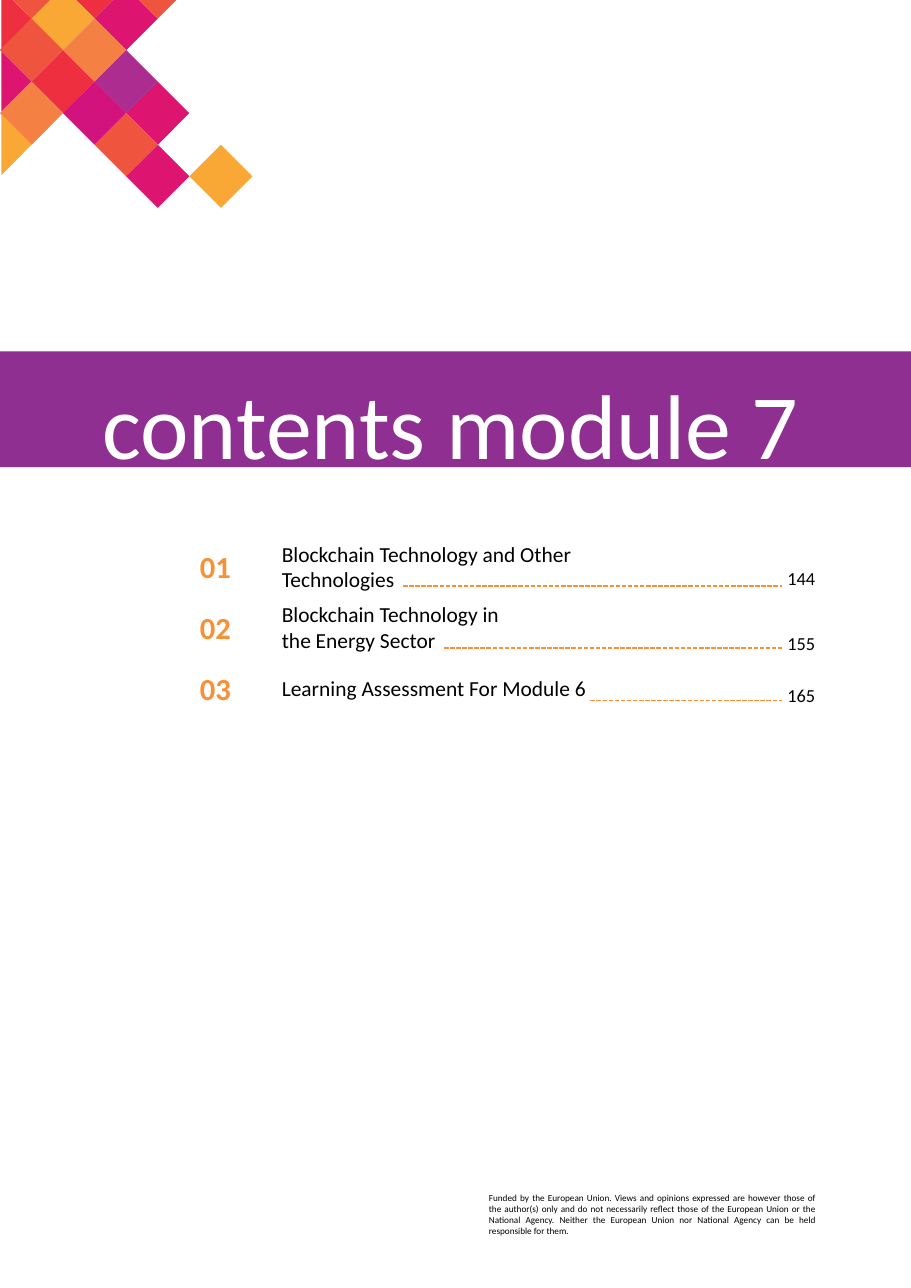
from dataclasses import dataclass

from lxml import etree
from pptx import Presentation
from pptx.dml.color import RGBColor
from pptx.enum.dml import MSO_LINE
from pptx.enum.shapes import MSO_CONNECTOR, MSO_SHAPE
from pptx.enum.text import MSO_ANCHOR, MSO_AUTO_SIZE, PP_ALIGN
from pptx.oxml.ns import qn
from pptx.slide import Slide
from pptx.text.text import TextFrame
from pptx.util import Pt

LEFT, CENTER, RIGHT = PP_ALIGN.LEFT, PP_ALIGN.CENTER, PP_ALIGN.RIGHT
JUSTIFY = PP_ALIGN.JUSTIFY
TOP, MIDDLE = MSO_ANCHOR.TOP, MSO_ANCHOR.MIDDLE
NO_AUTOFIT = MSO_AUTO_SIZE.NONE
RECTANGLE, STRAIGHT = MSO_SHAPE.RECTANGLE, MSO_CONNECTOR.STRAIGHT
LEADER_DASH = MSO_LINE.SQUARE_DOT

PAGE_WIDTH, PAGE_HEIGHT = 595.44, 841.68
TITLE_ONLY = 5
FONT = "Calibri"
BLACK, WHITE, ORANGE, PURPLE = "000000", "FFFFFF", "F79037", "8E2F91"
AMBER, RED, CORAL = "F9A835", "ED2F40", "EF543F"
PEACH, PINK, MAGENTA, VIOLET = "F48043", "DD1470", "D3137D", "AC2C90"

HALF_TILE = 20.63
FIRST_ROW_Y = 12.1
MOSAIC_LEFT, MOSAIC_TOP = 0.9, -2.9

FUNDING = (
    "Funded by the European Union. Views and opinions expressed are however "
    "those of the author(s) only and do not necessarily reflect those of the "
    "European Union or the National Agency. Neither the European Union nor "
    "National Agency can be held responsible for them."
)

Point = tuple[float, float]
Box = tuple[float, float, float, float]


@dataclass(frozen=True)
class Tile:
    """A diamond centred on a lattice point, counted in half tiles."""

    column: int
    row: int
    color: str


@dataclass(frozen=True)
class Entry:
    number: str
    heading: tuple[str, ...]
    top: float
    page: str
    page_top: float
    leader_start: float
    leader_y: float


TILES = [
    Tile(3, -1, RED), Tile(4, 0, PINK), Tile(5, -1, CORAL), Tile(2, 0, AMBER),
    Tile(1, 1, CORAL), Tile(2, 2, RED), Tile(3, 1, PEACH), Tile(0, 2, PINK),
    Tile(0, 4, AMBER), Tile(1, 3, PEACH), Tile(7, 5, AMBER), Tile(5, 5, PINK),
    Tile(5, 3, PINK), Tile(4, 2, VIOLET), Tile(3, 3, MAGENTA),
    Tile(4, 4, CORAL), Tile(1, -1, CORAL), Tile(0, 0, RED),
]

ENTRIES = [
    Entry("01", ("Blockchain Technology and Other", "Technologies"),
          356.4, "144", 364.3, 263.5, 383),
    Entry("02", ("Blockchain Technology in", "the Energy Sector"),
          396, "155", 406.8, 290.2, 423.4),
    Entry("03", ("Learning Assessment For Module 6",),
          436, "165", 440.6, 385.9, 457.9),
]


def rgb(color: str) -> RGBColor:
    return RGBColor.from_string(color)


def clip(points: list[Point], axis: int, limit: float) -> list[Point]:
    """Keep the part of a polygon at or beyond the limit on one axis."""
    kept = []
    for start, end in zip(points, points[1:] + points[:1]):
        if start[axis] >= limit:
            kept.append(start)
        if (start[axis] - limit) * (end[axis] - limit) < 0:
            share = (limit - start[axis]) / (end[axis] - start[axis])
            kept.append((start[0] + share * (end[0] - start[0]),
                         start[1] + share * (end[1] - start[1])))
    return kept


def paint(shape, color: str) -> None:
    shape.shadow.inherit = False
    shape.fill.solid()
    shape.fill.fore_color.rgb = rgb(color)
    shape.line.fill.background()


def draw_tile(slide: Slide, tile: Tile) -> None:
    x = tile.column * HALF_TILE
    y = FIRST_ROW_Y + tile.row * HALF_TILE
    corners = [(x, y - HALF_TILE), (x + HALF_TILE, y),
               (x, y + HALF_TILE), (x - HALF_TILE, y)]
    if tile.column == 0:
        corners = clip(corners, 0, MOSAIC_LEFT)
    outline = [(Pt(px), Pt(py)) for px, py in clip(corners, 1, MOSAIC_TOP)]
    builder = slide.shapes.build_freeform(*outline[0])
    builder.add_line_segments(outline[1:], close=True)
    paint(builder.convert_to_shape(), tile.color)


def write(frame: TextFrame, lines: tuple[str, ...], size: float, color: str,
          align=LEFT, anchor=TOP, bold: bool = False) -> None:
    frame_format = {"word_wrap": True, "auto_size": NO_AUTOFIT,
                    "vertical_anchor": anchor}
    for name, value in frame_format.items():
        setattr(frame, name, value)
    font_format = {"name": FONT, "size": Pt(size), "bold": bold}
    for index, line in enumerate(lines):
        paragraph = frame.add_paragraph() if index else frame.paragraphs[0]
        paragraph.alignment = align
        run = paragraph.add_run()
        run.text = line
        for name, value in font_format.items():
            setattr(run.font, name, value)
        run.font.color.rgb = rgb(color)


def add_text(slide: Slide, box: Box, lines: tuple[str, ...], size: float,
             color: str, align=LEFT, anchor=TOP, bold: bool = False) -> None:
    textbox = slide.shapes.add_textbox(*map(Pt, box))
    write(textbox.text_frame, lines, size, color, align, anchor, bold)


def draw_leader(slide: Slide, start: float, end: float, y: float) -> None:
    leader = slide.shapes.add_connector(
        STRAIGHT, Pt(start), Pt(y), Pt(end), Pt(y))
    leader.line.color.rgb = rgb(ORANGE)
    leader.line.width = Pt(1)
    leader.line.dash_style = LEADER_DASH
    etree.SubElement(leader.element.spPr, qn("a:effectLst"))


def draw_entry(slide: Slide, entry: Entry) -> None:
    add_text(slide, (115.2, entry.top, 51.1, 27.4), (entry.number,),
             20, ORANGE, CENTER, MIDDLE, True)
    add_text(slide, (177.1, entry.top, 279.4, 27.4), entry.heading,
             14, BLACK, LEFT, MIDDLE)
    add_text(slide, (504, entry.page_top, 36, 27.4), (entry.page,),
             12, BLACK, RIGHT, MIDDLE)
    draw_leader(slide, entry.leader_start, 511.2, entry.leader_y)


def place_title(slide: Slide) -> None:
    """Set the title and bring it in front of the banner."""
    title = slide.shapes.title
    placement = {"left": 59.8, "top": 233.3, "width": 504, "height": 76.3}
    for name, value in placement.items():
        setattr(title, name, Pt(value))
    title.text_frame.margin_top = Pt(7.2)
    title.text_frame.margin_bottom = Pt(0)
    write(title.text_frame, ("contents module 7",), 60, WHITE)
    title.element.getparent().append(title.element)


def main() -> None:
    deck = Presentation()
    deck.slide_width, deck.slide_height = Pt(PAGE_WIDTH), Pt(PAGE_HEIGHT)
    slide = deck.slides.add_slide(deck.slide_layouts[TITLE_ONLY])
    banner = slide.shapes.add_shape(
        RECTANGLE, Pt(0), Pt(229.7), Pt(PAGE_WIDTH), Pt(75.6))
    paint(banner, PURPLE)
    for tile in TILES:
        draw_tile(slide, tile)
    add_text(slide, (312.5, 775.4, 227.5, 36), (FUNDING,), 6, BLACK, JUSTIFY)
    for entry in ENTRIES:
        draw_entry(slide, entry)
    place_title(slide)
    deck.save("out.pptx")


if __name__ == "__main__":
    main()
